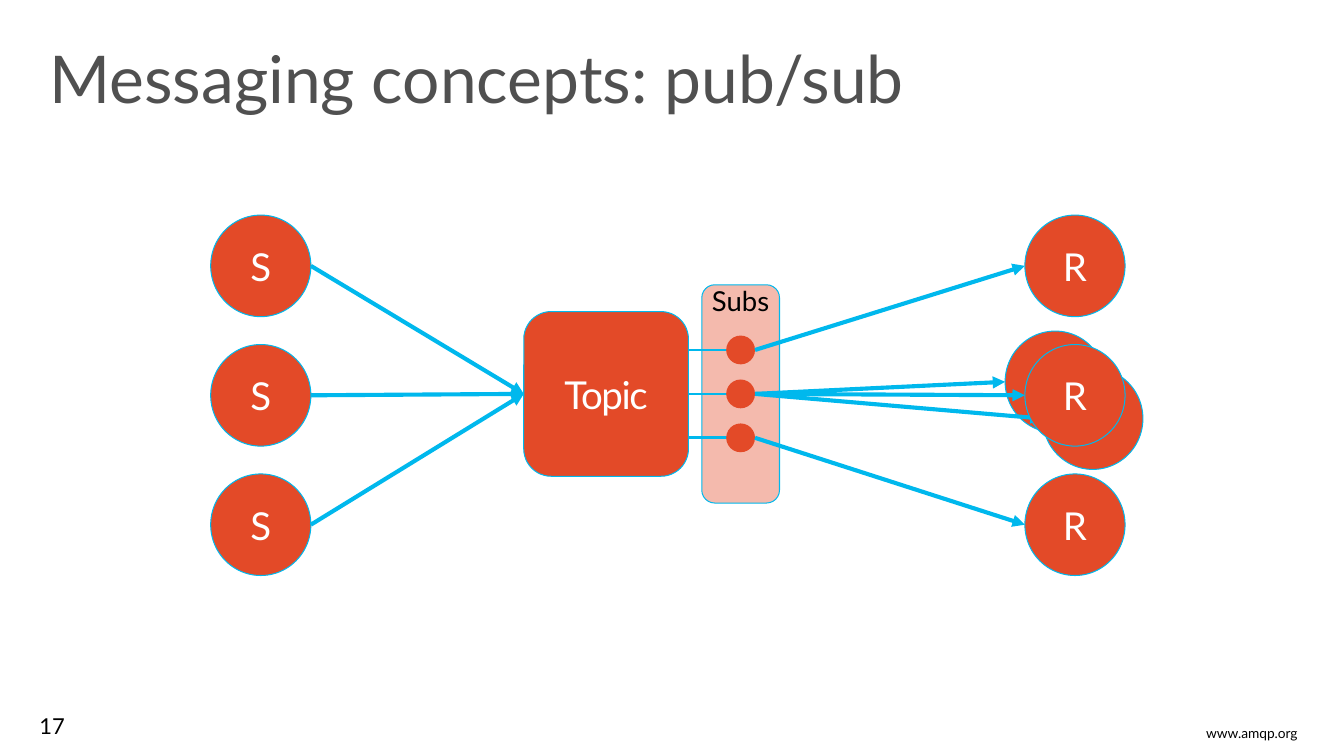
from pptx import Presentation, util as u
from pptx.dml.color import RGBColor
from pptx.enum import shapes, text
from pptx.oxml.ns import qn
from lxml import etree

# Content
TITLE = "Messaging concepts: pub/sub"
PAGE_NUMBER = "17"
SITE = "www.amqp.org"
SENDER, RECEIVER, TOPIC, SUBS = "S", "R", "Topic", "Subs"

THEME = dict(
    font="Lato", orange="E34A28", blue="00B8ED", grey="505050",
    black="000000", white="FFFFFF",
    title=48, node=28, subs=20, number=16, site=10,
    outline=0.75, stub=2, arrow=3,
)

# Layout in points: everything is centred on the hub row
HUB_Y, ROW_PITCH = 287, 94.3
NODE_Y = HUB_Y + 1
NODE_W, NODE_H = 73, 74
SENDER_X, RECEIVER_X = 190, 783.2
TOPIC_X, TOPIC_SIZE = 441.6, 120
SUBS_X, SUBS_W, SUBS_H = 539.6, 56.6, 159
DOT_SIZE, DOT_PITCH = 21, 32
ROWS = (-1, 0, 1)

# Receivers from back to front: centre x, centre y, subscription row
RECEIVERS = [
    (RECEIVER_X, NODE_Y - ROW_PITCH, -1),
    (RECEIVER_X, NODE_Y + ROW_PITCH, 1),
    (RECEIVER_X - 14.4, NODE_Y - 9.8, 0),
    (RECEIVER_X + 13, NODE_Y + 17, 0),
    (RECEIVER_X, NODE_Y, 0),
]


def rgb(name):
    return RGBColor.from_string(THEME[name])


def write(box, words, size, color="black", align="LEFT", anchor="TOP",
          inset=(7.2, 3.6), wrap=True, spacing=None):
    frame = box.text_frame
    frame.word_wrap = wrap
    frame.auto_size = text.MSO_AUTO_SIZE.NONE
    frame.vertical_anchor = text.MSO_ANCHOR[anchor]
    frame.margin_left = frame.margin_right = u.Pt(inset[0])
    frame.margin_top = frame.margin_bottom = u.Pt(inset[1])
    para = frame.paragraphs[0]
    para.alignment = text.PP_ALIGN[align]
    para.line_spacing = 1.0
    span = para.add_run()
    span.text = words
    span.font.name = THEME["font"]
    span.font.size = u.Pt(THEME[size])
    span.font.color.rgb = rgb(color)
    if spacing:
        span.font._element.set("spc", str(spacing * 100))


def text_box(page, left, top, width, height, words, size, **style):
    box = page.shapes.add_textbox(*map(u.Pt, (left, top, width, height)))
    write(box, words, size, **style)


def add_node(page, kind, x, y, width, height, words="", outlined=True, alpha=None):
    """Draw a filled shape centred on (x, y)."""
    node = page.shapes.add_shape(
        shapes.MSO_SHAPE[kind],
        *map(u.Pt, (x - width / 2, y - height / 2, width, height)))
    node.shadow.inherit = False
    node.fill.solid()
    node.fill.fore_color.rgb = rgb("orange")
    if alpha:
        color = node.fill._xPr.find(qn("a:solidFill"))[0]
        etree.SubElement(color, qn("a:alpha"), val=str(alpha * 1000))
    if outlined:
        node.line.color.rgb = rgb("blue")
        node.line.width = u.Pt(THEME["outline"])
    else:
        node.line.fill.background()
    if words:
        write(node, words, "node", color="white", align="CENTER",
              anchor="MIDDLE", inset=(2.9, 2.9), spacing=-1)
    return node


def add_line(page, start, end, weight, arrow=False):
    line = page.shapes.add_connector(
        shapes.MSO_CONNECTOR.STRAIGHT, *map(u.Pt, (*start, *end)))
    line.line.color.rgb = rgb("blue")
    line.line.width = u.Pt(THEME[weight])
    if arrow:
        etree.SubElement(line.line._ln, qn("a:tailEnd"), type="triangle")
    etree.SubElement(line._element.spPr, qn("a:effectLst"))
    return line


def dot_y(row):
    return HUB_Y + row * DOT_PITCH


def main():
    deck = Presentation()
    deck.slide_width, deck.slide_height = u.Pt(979.2), u.Pt(550.8)
    page = deck.slides.add_slide(deck.slide_layouts[5])

    # Title and footer
    title = page.shapes.title
    title.left, title.top = u.Pt(21.6), u.Pt(23.8)
    title.width, title.height = u.Pt(936), u.Pt(72)
    write(title, TITLE, "title", color="grey", inset=(14.4, 3.6))
    text_box(page, 831.6, 524.2, 121.7, 20, SITE, "site", align="RIGHT",
             inset=(7.9, 3.6))
    text_box(page, 21.6, 515.5, 54, 26.6, PAGE_NUMBER, "number")

    # Subscriptions panel and topic
    add_node(page, "ROUNDED_RECTANGLE", SUBS_X, HUB_Y, SUBS_W, SUBS_H, alpha=38)
    topic = add_node(page, "ROUNDED_RECTANGLE", TOPIC_X, HUB_Y,
                     TOPIC_SIZE, TOPIC_SIZE, TOPIC)
    topic_left, topic_right = TOPIC_X - TOPIC_SIZE / 2, TOPIC_X + TOPIC_SIZE / 2
    for row in ROWS:
        y = dot_y(row)
        stub = add_line(page, (topic_right, y), (SUBS_X, y), "stub")
        if row == 0:
            stub.begin_connect(topic, 3)
        add_node(page, "OVAL", SUBS_X, y, DOT_SIZE, DOT_SIZE, outlined=False)
    text_box(page, SUBS_X - 47.5, 203, 95, 32, SUBS, "subs", align="CENTER",
             anchor="MIDDLE", wrap=False)

    # Senders publish to the topic
    for row in ROWS:
        y = NODE_Y + row * ROW_PITCH
        add_node(page, "OVAL", SENDER_X, y, NODE_W, NODE_H, SENDER)
        arrow = add_line(page, (SENDER_X + NODE_W / 2, y), (topic_left, HUB_Y),
                         "arrow", arrow=True)
        arrow.end_connect(topic, 1)

    # Subscriptions deliver to the receivers
    for x, y, row in RECEIVERS:
        add_node(page, "OVAL", x, y, NODE_W, NODE_H, RECEIVER)
        add_line(page, (SUBS_X + DOT_SIZE / 2, dot_y(row)), (x - NODE_W / 2, y),
                 "arrow", arrow=True)

    deck.save("out.pptx")


if __name__ == "__main__":
    main()
